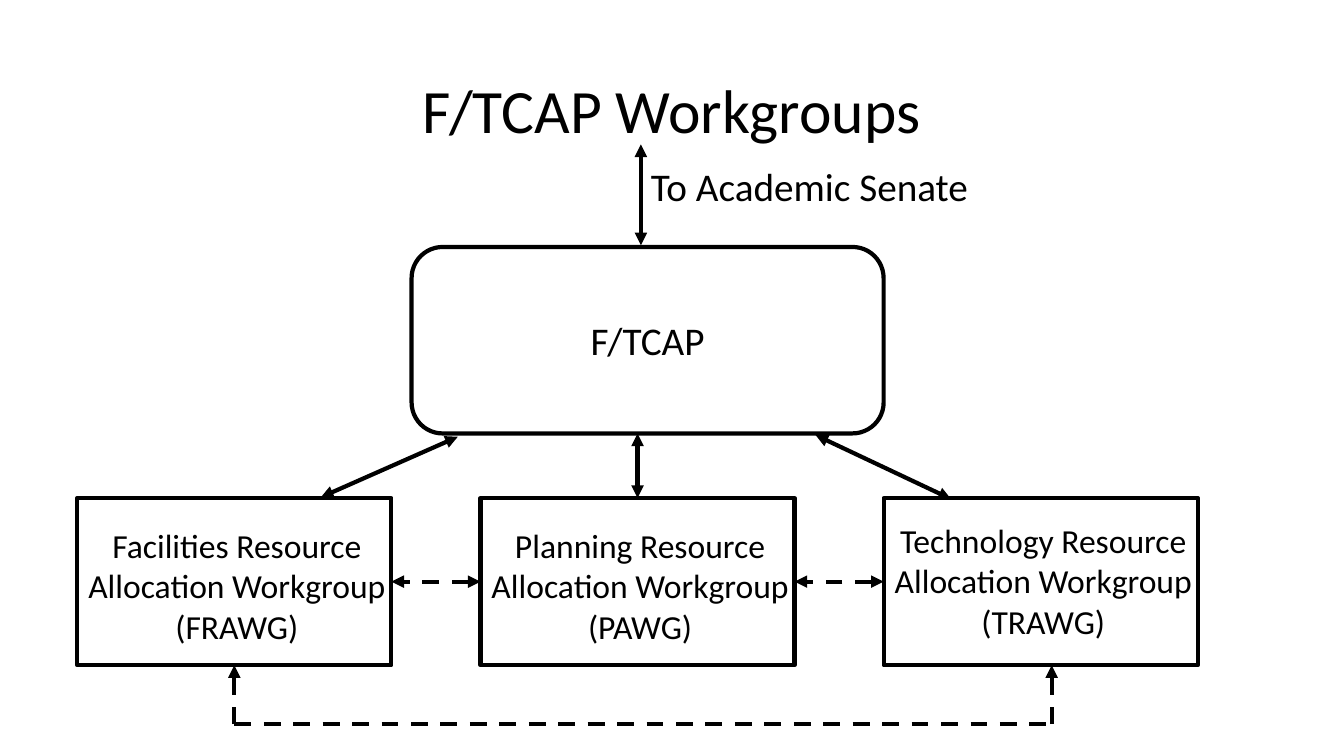
from dataclasses import dataclass
from typing import Optional

from lxml import etree
from pptx import Presentation
from pptx import util as u
from pptx.dml.color import RGBColor
from pptx.enum import dml, shapes, text
from pptx.oxml import ns

BLACK = RGBColor(0x00, 0x00, 0x00)
FONT = "Calibri"
LINE_WIDTH = u.Pt(3)

prs = Presentation()
prs.slide_width, prs.slide_height = u.Inches(13.333), u.Inches(7.5)
COLUMN = prs.slide_width / 160
ROW = prs.slide_height / 90

slide = prs.slides.add_slide(prs.slide_layouts[5])


@dataclass(frozen=True)
class Area:
    """A rectangle in grid columns and rows."""
    left: float
    top: float
    width: float
    height: float

    def emu(self) -> tuple[int, int, int, int]:
        return (round(self.left * COLUMN), round(self.top * ROW),
                round(self.width * COLUMN), round(self.height * ROW))


@dataclass(frozen=True)
class Workgroup:
    name: str
    abbreviation: str
    label_top: float = 61.9


@dataclass(frozen=True)
class Join:
    shape: object
    site: int


@dataclass(frozen=True)
class Link:
    """A line between two grid points, optionally joined to boxes."""
    start: tuple[float, float] = (0, 0)
    end: tuple[float, float] = (0, 0)
    start_join: Optional[Join] = None
    end_join: Optional[Join] = None
    dashed: bool = False
    start_arrow: bool = True
    end_arrow: bool = True


def write(frame, *paragraphs: str, size: float, align=text.PP_ALIGN.CENTER,
          spacing: float = 1.0) -> None:
    frame.word_wrap = True
    for index, words in enumerate(paragraphs):
        paragraph = frame.paragraphs[0] if index == 0 else frame.add_paragraph()
        paragraph.alignment = align
        paragraph.line_spacing = spacing
        run = paragraph.add_run()
        run.text = words
        run.font.size = u.Pt(size)
        run.font.name = FONT
        run.font.color.rgb = BLACK


def add_label(area: Area, *paragraphs: str, **style) -> None:
    frame = slide.shapes.add_textbox(*area.emu()).text_frame
    write(frame, *paragraphs, **style)
    frame.auto_size = text.MSO_AUTO_SIZE.SHAPE_TO_FIT_TEXT


def add_box(kind: shapes.MSO_SHAPE, area: Area):
    box = slide.shapes.add_shape(kind, *area.emu())
    box.shadow.inherit = False
    box.fill.background()
    box.line.color.rgb = BLACK
    box.line.width = LINE_WIDTH
    return box


def add_link(link: Link) -> None:
    (x1, y1), (x2, y2) = link.start, link.end
    connector = slide.shapes.add_connector(
        shapes.MSO_CONNECTOR.STRAIGHT, round(x1 * COLUMN), round(y1 * ROW),
        round(x2 * COLUMN), round(y2 * ROW))
    if link.start_join:
        connector.begin_connect(link.start_join.shape, link.start_join.site)
    if link.end_join:
        connector.end_connect(link.end_join.shape, link.end_join.site)
    connector.line.color.rgb = BLACK
    connector.line.width = LINE_WIDTH
    if link.dashed:
        connector.line.dash_style = dml.MSO_LINE.DASH
    outline = connector.line._get_or_add_ln()
    for tag, shown in (("a:headEnd", link.start_arrow), ("a:tailEnd", link.end_arrow)):
        if shown:
            etree.SubElement(outline, ns.qn(tag), type="triangle")
    etree.SubElement(connector._element.spPr, ns.qn("a:effectLst"))


title = slide.shapes.title
title.left, title.top, title.width, title.height = Area(11, 4.8, 138, 17.4).emu()
title.text_frame.vertical_anchor = text.MSO_ANCHOR.MIDDLE
write(title.text_frame, "F/TCAP Workgroups", size=44, spacing=0.9)

add_box(shapes.MSO_SHAPE.ROUNDED_RECTANGLE, Area(49, 29.4, 56.2, 22.2))
add_label(Area(52.6, 37.1, 49, 6.8), "F/TCAP", size=28)
add_label(Area(76.3, 18.7, 49, 6.8), "To Academic Senate", size=28,
          align=text.PP_ALIGN.LEFT)

FIRST_LEFT, PITCH = 9.2, 48
GROUP_TOP, GROUP_WIDTH, GROUP_HEIGHT = 59.3, 37.4, 19.9
workgroups = (
    Workgroup("Facilities Resource Allocation Workgroup", "(FRAWG)"),
    Workgroup("Planning Resource Allocation Workgroup", "(PAWG)"),
    Workgroup("Technology Resource Allocation Workgroup", "(TRAWG)", label_top=61.3),
)
group_boxes = []
for position, group in enumerate(workgroups):
    left = FIRST_LEFT + position * PITCH
    group_boxes.append(add_box(shapes.MSO_SHAPE.RECTANGLE,
                               Area(left, GROUP_TOP, GROUP_WIDTH, GROUP_HEIGHT)))
    add_label(Area(left - 0.1, group.label_top, 38.2, 15.7),
              group.name, group.abbreviation, size=24)
facilities, planning, technology = group_boxes

LOOP_LEFT = FIRST_LEFT + GROUP_WIDTH / 2
LOOP_RIGHT, LOOP_ROW = 125.2, 86.2
GROUP_BOTTOM = GROUP_TOP + GROUP_HEIGHT
links = (
    Link((76.3, 17.2), (76.3, 29.2)),
    Link((54.5, 52), (38.2, 59.2)),
    Link((75.9, 51.6), end_join=Join(planning, 0)),
    Link((97.1, 51.8), (113.2, 59.4)),
    Link(start_join=Join(planning, 1), end_join=Join(facilities, 3), dashed=True),
    Link(start_join=Join(technology, 1), end_join=Join(planning, 3), dashed=True),
    Link((LOOP_LEFT, LOOP_ROW), end_join=Join(facilities, 2), dashed=True,
         start_arrow=False),
    Link((LOOP_RIGHT, LOOP_ROW), (LOOP_RIGHT, GROUP_BOTTOM), dashed=True,
         start_arrow=False),
    Link((LOOP_LEFT, LOOP_ROW), (LOOP_RIGHT, LOOP_ROW), dashed=True,
         start_arrow=False, end_arrow=False),
)
for link in links:
    add_link(link)

prs.save("out.pptx")
